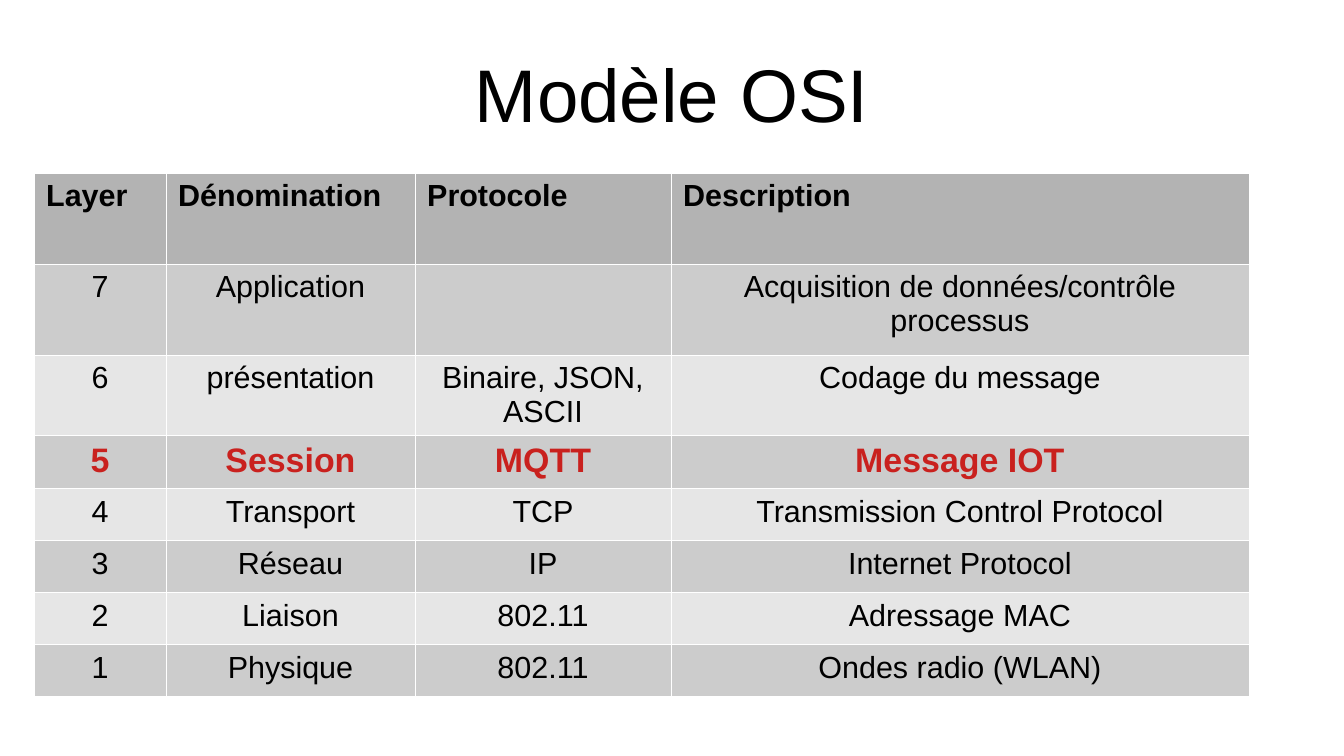
"""Build the OSI model slide with its table of layers."""
from dataclasses import dataclass

from lxml.etree import SubElement
from pptx import Presentation
from pptx.dml.color import RGBColor
from pptx.enum.text import MSO_ANCHOR as Anchor, PP_ALIGN as Align
from pptx.oxml.ns import qn
from pptx.slide import Slide
from pptx.table import _Cell as Cell
from pptx.text.text import TextFrame
from pptx.util import Emu, Pt

EMU_PER_PX = 7495
FONT = "Arial"
COLORS = {
    "text": "000000",
    "accent": "C9211E",
    "header": "B3B3B3",
    "odd": "CCCCCC",
    "even": "E6E6E6",
    "border": "FFFFFF",
}
BORDER_WIDTH = Pt(0.06)
COLUMN_WIDTHS = (132, 249, 256, 578)


@dataclass(frozen=True)
class TextStyle:
    size: int
    color: str = "text"
    bold: bool = False
    align: Align = Align.CENTER


@dataclass(frozen=True)
class LayerRow:
    texts: tuple[str, str, str, str]
    height: int = 52
    style: TextStyle = TextStyle(18)


TITLE_STYLE = TextStyle(44)
HEADER_STYLE = TextStyle(18, bold=True, align=Align.LEFT)
SESSION_STYLE = TextStyle(20, "accent", bold=True)

LAYERS = (
    LayerRow(("Layer", "Dénomination", "Protocole", "Description"), 91, HEADER_STYLE),
    LayerRow(("7", "Application", "", "Acquisition de données/contrôle processus"), 91),
    LayerRow(("6", "présentation", "Binaire, JSON, ASCII", "Codage du message"), 80),
    LayerRow(("5", "Session", "MQTT", "Message IOT"), 53, SESSION_STYLE),
    LayerRow(("4", "Transport", "TCP", "Transmission Control Protocol")),
    LayerRow(("3", "Réseau", "IP", "Internet Protocol")),
    LayerRow(("2", "Liaison", "802.11", "Adressage MAC")),
    LayerRow(("1", "Physique", "802.11", "Ondes radio (WLAN)")),
)


def px(length: int) -> Emu:
    """Turn pixels into EMU."""
    return Emu(length * EMU_PER_PX)


def write(frame: TextFrame, text: str, style: TextStyle) -> None:
    """Put one styled run in the first paragraph."""
    paragraph = frame.paragraphs[0]
    paragraph.alignment = style.align
    if not text:
        return
    run = paragraph.add_run()
    run.text = text
    run.font.name = FONT
    run.font.size = Pt(style.size)
    run.font.bold = style.bold
    run.font.color.rgb = RGBColor.from_string(COLORS[style.color])


def draw_borders(cell: Cell) -> None:
    """Give the cell a thin line on all four sides."""
    properties = cell._tc.get_or_add_tcPr()
    for side in ("a:lnL", "a:lnR", "a:lnT", "a:lnB"):
        line = SubElement(properties, qn(side), w=str(BORDER_WIDTH))
        fill = SubElement(line, qn("a:solidFill"))
        SubElement(fill, qn("a:srgbClr"), val=COLORS["border"])


def draw_title(slide: Slide, text: str) -> None:
    """Place and format the title placeholder."""
    title = slide.shapes.title
    title.left, title.top, title.width, title.height = map(px, (67, 30, 1210, 126))
    frame = title.text_frame
    frame.margin_left = frame.margin_right = frame.margin_top = frame.margin_bottom = 0
    frame.vertical_anchor = Anchor.MIDDLE
    frame.word_wrap = True
    write(frame, text, TITLE_STYLE)


def draw_layers(slide: Slide, layers: tuple[LayerRow, ...]) -> None:
    """Draw the table of layers with alternating row fills."""
    width, height = sum(COLUMN_WIDTHS), sum(layer.height for layer in layers)
    table = slide.shapes.add_table(
        len(layers), len(COLUMN_WIDTHS), px(34), px(173), px(width), px(height)
    ).table
    table.horz_banding = False
    for column, column_width in zip(table.columns, COLUMN_WIDTHS):
        column.width = px(column_width)
    for index, (row, layer) in enumerate(zip(table.rows, layers)):
        row.height = px(layer.height)
        band = "header" if index == 0 else "odd" if index % 2 else "even"
        for cell, text in zip(row.cells, layer.texts):
            draw_borders(cell)
            cell.fill.solid()
            cell.fill.fore_color.rgb = RGBColor.from_string(COLORS[band])
            write(cell.text_frame, text, layer.style)


def main() -> None:
    """Build and save the slide."""
    deck = Presentation()
    deck.slide_width, deck.slide_height = px(1344), px(756)
    slide = deck.slides.add_slide(deck.slide_layouts.get_by_name("Title Only"))
    draw_title(slide, "Modèle OSI")
    draw_layers(slide, LAYERS)
    deck.save("out.pptx")


if __name__ == "__main__":
    main()
